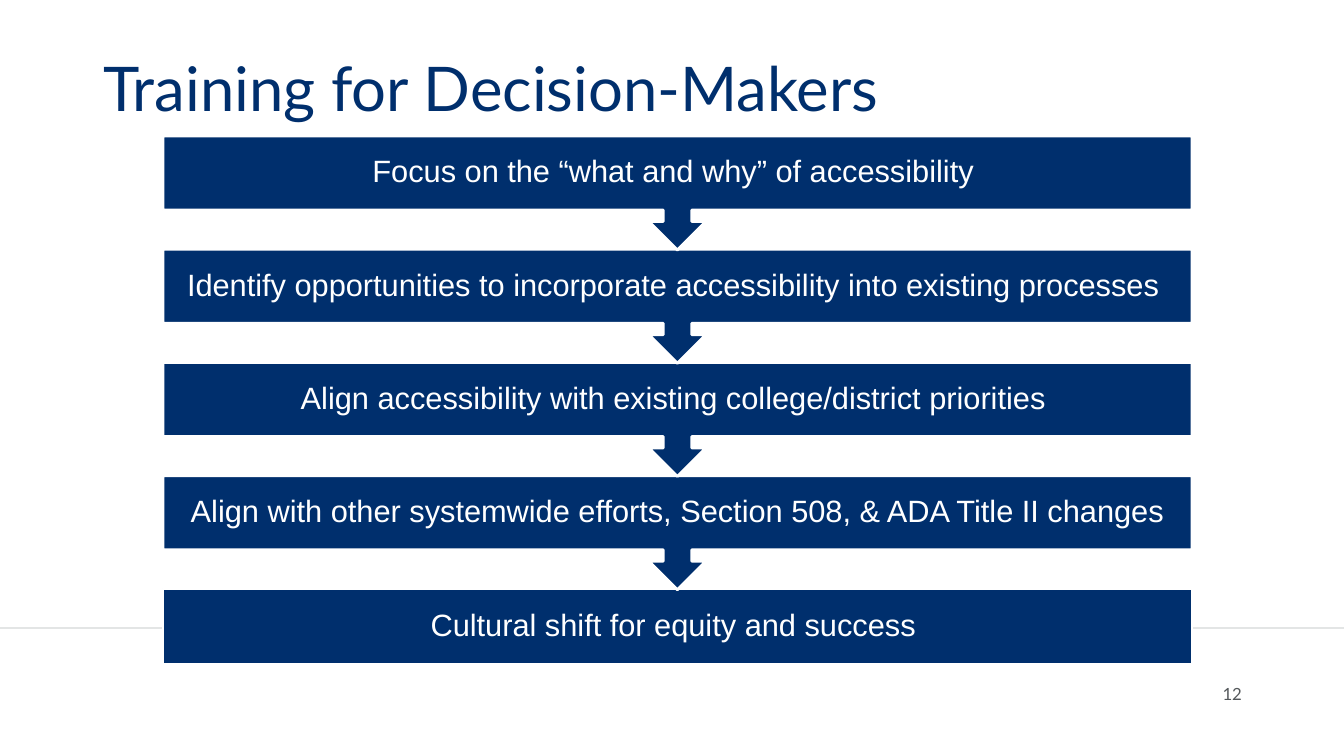
from lxml import etree
from pptx import Presentation
from pptx import util as u
from pptx.dml.color import RGBColor
from pptx.enum import shapes, text
from pptx.oxml.ns import qn

EMU_PER_PX = 914400 / 100.8
COLORS = {"navy": "002F6D", "white": "FFFFFF", "rule": "E3E5E5", "grey": "53575A"}
STEPS = [
    "Focus on the “what and why” of accessibility ",
    "Identify opportunities to incorporate accessibility into existing processes ",
    "Align accessibility with existing college/district priorities ",
    "Align with other systemwide efforts, Section 508, & ADA Title II changes",
    "Cultural shift for equity and success ",
]
STEP_HEIGHT = 75
CALLOUT_HEIGHT = 114


def px(*lengths):
    return [u.Emu(round(length * EMU_PER_PX)) for length in lengths]


def color(name):
    return RGBColor.from_string(COLORS[name])


def write(shape, words, font, size, color_name, align, line_spacing=1.0, inset=None):
    frame = shape.text_frame
    frame.text = words
    frame_format = {"word_wrap": True, "auto_size": text.MSO_AUTO_SIZE.NONE,
                    "vertical_anchor": text.MSO_ANCHOR.MIDDLE}
    if inset is not None:
        margin = px(inset)[0]
        frame_format.update({f"margin_{side}": margin
                             for side in ("left", "top", "right", "bottom")})
    for name, value in frame_format.items():
        setattr(frame, name, value)
    paragraph = frame.paragraphs[0]
    for name, value in {"alignment": align, "line_spacing": line_spacing}.items():
        setattr(paragraph, name, value)
    for name, value in {"name": font, "size": u.Pt(size)}.items():
        setattr(paragraph.font, name, value)
    paragraph.font.color.rgb = color(color_name)


# Title in its placeholder
def add_title(slide, box, words):
    title = slide.shapes.title
    for name, value in zip(("left", "top", "width", "height"), px(*box)):
        setattr(title, name, value)
    write(title, words, "Lato", 44, "navy", text.PP_ALIGN.LEFT, 0.9)


# Thin rule across the slide
def add_rule(slide, left, top, width):
    rule = slide.shapes.add_connector(
        shapes.MSO_CONNECTOR.STRAIGHT, *px(left, top, left + width, top))
    rule.line.color.rgb = color("rule")
    rule.line.width = u.Pt(1)
    etree.SubElement(rule.element.spPr, qn("a:effectLst"))


# Page number, right aligned
def add_page_number(slide, box, number):
    page_number = slide.shapes.add_textbox(*px(*box))
    write(page_number, number, "Lato", 12, "grey", text.PP_ALIGN.RIGHT)


# Column of steps, each pointing down to the next
def add_steps(slide, box, steps):
    left, top, width, height = box
    pitch = (height - STEP_HEIGHT) / (len(steps) - 1)
    # Drawn from the bottom up, so each arrow tip lies over the next step
    for index, words in reversed(list(enumerate(steps))):
        is_last = index == len(steps) - 1
        kind = (shapes.MSO_SHAPE.RECTANGLE if is_last
                else shapes.MSO_SHAPE.DOWN_ARROW_CALLOUT)
        step_height = STEP_HEIGHT if is_last else CALLOUT_HEIGHT
        step = slide.shapes.add_shape(
            kind, *px(left, top + index * pitch, width, step_height))
        step.shadow.inherit = False
        step.fill.solid()
        step.fill.fore_color.rgb = color("navy")
        step.line.color.rgb = color("white")
        step.line.width = u.Pt(2)
        write(step, words, "Arial", 22, "white", text.PP_ALIGN.CENTER, 0.9, inset=17)


def main():
    presentation = Presentation()
    presentation.slide_width, presentation.slide_height = px(1344, 756)
    slide = presentation.slides.add_slide(presentation.slide_layouts[5])
    add_rule(slide, 0, 628, 1344)
    add_title(slide, (93, 19, 1159, 146), "Training for Decision-Makers")
    add_page_number(slide, (950, 674, 302, 40), "12")
    add_steps(slide, (163, 136, 1029, 528), STEPS)
    presentation.save("out.pptx")


if __name__ == "__main__":
    main()
